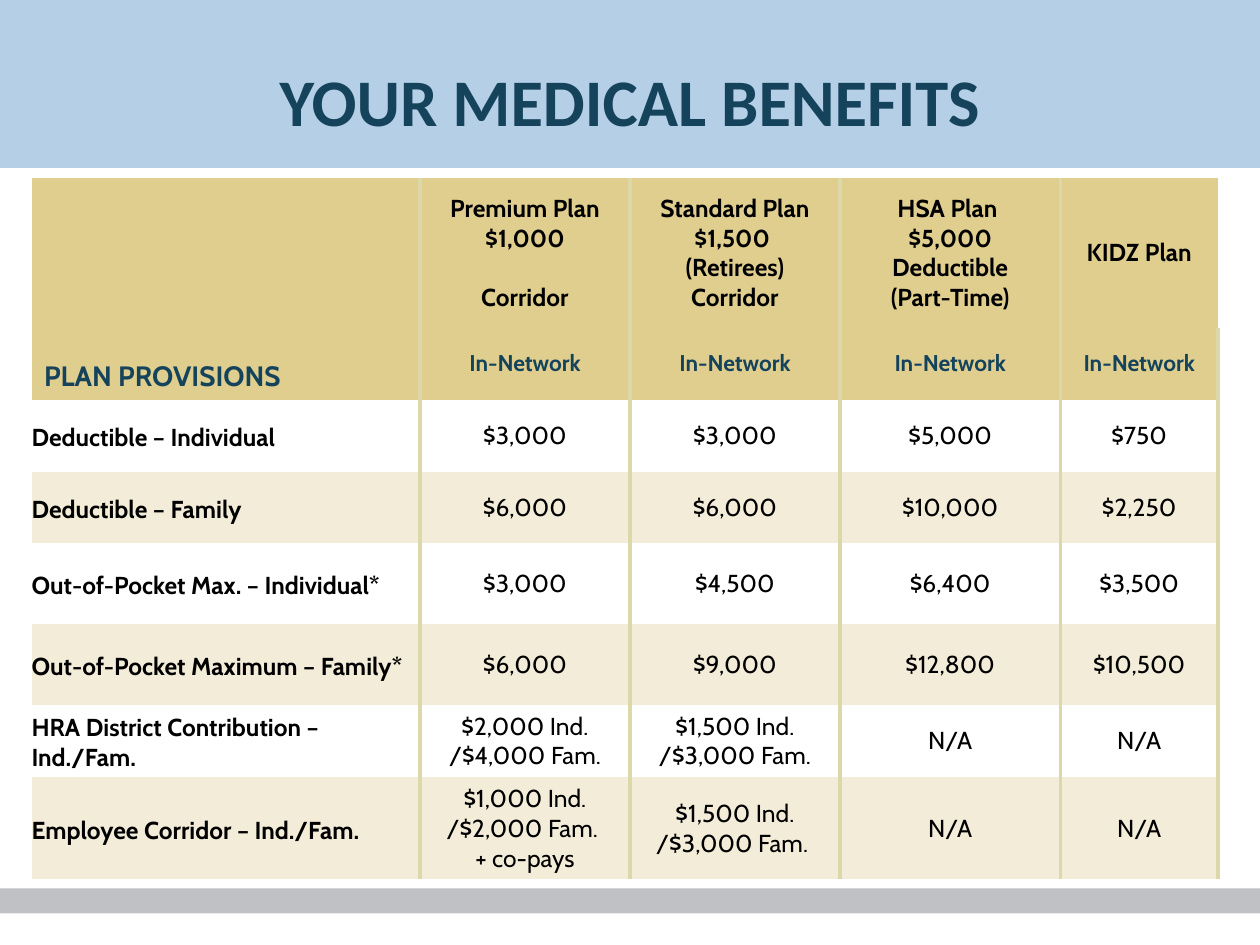
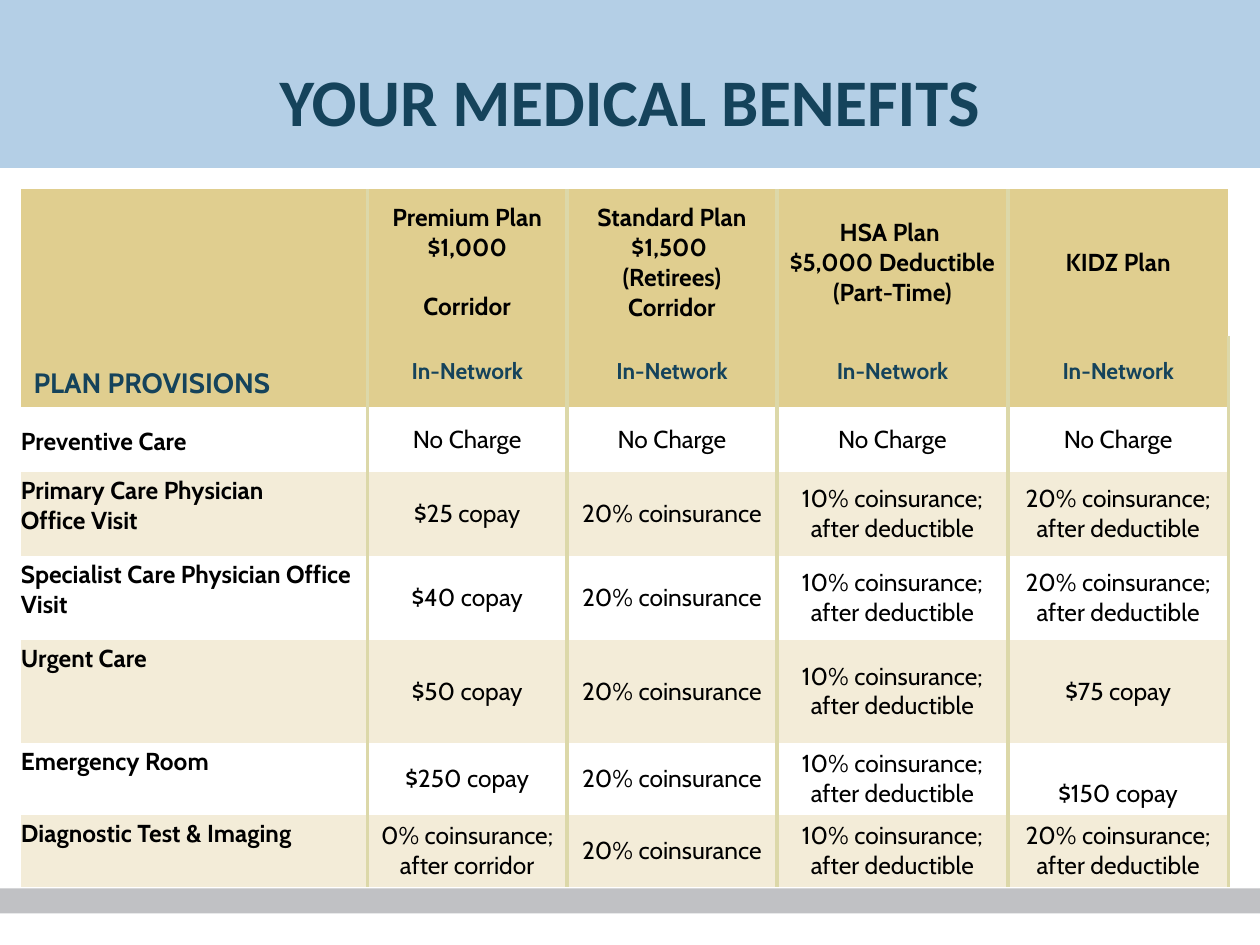
from dataclasses import dataclass

import pptx
import pptx.dml.color
import pptx.enum.shapes
import pptx.enum.text
import pptx.oxml
import pptx.oxml.ns
import pptx.util

Pt = pptx.util.Pt
RGB = pptx.dml.color.RGBColor.from_string
Align = pptx.enum.text.PP_ALIGN
Anchor = pptx.enum.text.MSO_ANCHOR


@dataclass(frozen=True)
class Theme:
    navy: str = "15435B"
    sky: str = "B4CFE6"
    grey: str = "C0C1C4"
    gold: str = "E0CE8F"
    rule: str = "DCD8A9"
    cream: str = "F3ECD8"
    white: str = "FFFFFF"
    black: str = "000000"
    title_font: str = "Calibri"
    table_font: str = "Cabin"
    title_size: int = 38
    corner_size: int = 16
    text_size: int = 14
    network_size: int = 13
    line_pitch: int = 17
    rule_width: float = 2.25


THEME = Theme()

# In the texts, \v breaks a line and \n starts a paragraph set one line lower.
TITLE = "YOUR MEDICAL BENEFITS"
CORNER = "PLAN PROVISIONS"
NETWORK = "In-Network"
PLANS = [
    "Premium Plan $1,000\nCorridor",
    "Standard Plan $1,500 \v(Retirees)\vCorridor",
    "HSA Plan \v$5,000 Deductible\v(Part-Time)",
    "KIDZ Plan",
]
STANDARD = "20% coinsurance"
HSA = "10% coinsurance; after deductible"
KIDZ = "20% coinsurance; after deductible"

BENEFIT_TABLES = [
    {
        "left": 18, "top": 102,
        "columns": [222, 120, 120, 126, 90],
        "heights": [85.3, 41.1, 41.1, 41.1, 46.2, 46.2, 41.1, 58.4],
        "top_labels": [],
        "low_values": [],
        "provisions": [
            ("Deductible – Individual", "$3,000", "$3,000", "$5,000", "$750"),
            ("Deductible – Family", "$6,000", "$6,000", "$10,000", "$2,250"),
            ("Out-of-Pocket Max. – Individual*",
             "$3,000", "$4,500", "$6,400", "$3,500"),
            ("Out-of-Pocket Maximum – Family*",
             "$6,000", "$9,000", "$12,800", "$10,500"),
            ("HRA District Contribution – Ind./Fam.", "$2,000 Ind. /$4,000 Fam.",
             "$1,500 Ind. /$3,000 Fam.", "N/A", "N/A"),
            ("Employee Corridor – Ind./Fam.",
             "$1,000 Ind. /$2,000 Fam. \v+ co-pays",
             "$1,500 Ind. /$3,000 Fam. ", "N/A", "N/A"),
        ],
    },
    {
        "left": 12, "top": 108,
        "columns": [198, 114, 120, 132, 126],
        "heights": [84, 40.5, 37.2, 48, 48, 58.7, 41.1, 41.1],
        "top_labels": [1, 2, 3, 4, 5],
        "low_values": ["$150 copay"],
        "provisions": [
            ("Preventive Care",) + ("No Charge",) * 4,
            ("Primary Care Physician \vOffice Visit",
             "$25 copay", STANDARD, HSA, KIDZ),
            ("Specialist Care Physician Office Visit",
             "$40 copay", STANDARD, HSA, KIDZ),
            ("Urgent Care", "$50 copay", STANDARD, HSA, "$75 copay"),
            ("Emergency Room", "$250 copay", STANDARD, HSA, "$150 copay"),
            ("Diagnostic Test & Imaging",
             "0% coinsurance; after corridor", STANDARD, HSA, KIDZ),
        ],
    },
]


def set_font(paragraph, name, size, color, bold):
    paragraph.font.name = name
    paragraph.font.size = Pt(size)
    paragraph.font.bold = bold
    paragraph.font.color.rgb = RGB(color)


def add_bands(slide):
    """Draw the two bands and move them to the layout, behind its title."""
    layout_tree = slide.slide_layout.shapes.element
    bands = [(0, 96, THEME.sky), (507.6, 14.4, THEME.grey)]
    for number, (top, height, color) in enumerate(bands):
        band = slide.shapes.add_shape(
            pptx.enum.shapes.MSO_SHAPE.RECTANGLE, 0, Pt(top), Pt(720), Pt(height))
        band.shadow.inherit = False
        band.fill.solid()
        band.fill.fore_color.rgb = RGB(color)
        band.line.fill.background()
        band.element.nvSpPr.cNvPr.set("id", str(100 + number))
        layout_tree.insert(2, band.element)


def write_title(slide):
    title = slide.shapes.title
    title.left, title.top, title.width, title.height = 0, Pt(18), Pt(720), Pt(78)
    frame = title.text_frame
    frame.text = TITLE
    frame.auto_size = pptx.enum.text.MSO_AUTO_SIZE.NONE
    frame.vertical_anchor = Anchor.MIDDLE
    frame.paragraphs[0].alignment = Align.CENTER
    set_font(frame.paragraphs[0], THEME.title_font, THEME.title_size, THEME.navy, True)


def set_borders(cell, ruled_sides):
    """Rule the named sides (out of L, R, T, B) and clear the others."""
    for side in "LRTB":
        if side in ruled_sides:
            paint = f'<a:solidFill><a:srgbClr val="{THEME.rule}"/></a:solidFill>'
        else:
            paint = "<a:noFill/>"
        cell._tc.get_or_add_tcPr().append(pptx.oxml.parse_xml(
            f'<a:ln{side} {pptx.oxml.ns.nsdecls("a")} w="{Pt(THEME.rule_width)}">'
            f"{paint}</a:ln{side}>"))


def write_cell(cell, text, fill, size=THEME.text_size, color=THEME.black, bold=True,
               align=Align.CENTER, anchor=Anchor.MIDDLE, insets=(7.2, 3.6, 7.2, 3.6),
               space_before=0):
    cell.fill.solid()
    cell.fill.fore_color.rgb = RGB(fill)
    cell.vertical_anchor = anchor
    (cell.margin_left, cell.margin_top,
     cell.margin_right, cell.margin_bottom) = map(Pt, insets)
    cell.text_frame.text = text
    for number, paragraph in enumerate(cell.text_frame.paragraphs):
        paragraph.alignment = align
        paragraph.space_before = Pt(THEME.line_pitch if number else space_before)
        set_font(paragraph, THEME.table_font, size, color, bold)


def add_benefit_table(slide, benefits):
    columns, heights = benefits["columns"], benefits["heights"]
    table = slide.shapes.add_table(
        len(heights), len(columns), Pt(benefits["left"]), Pt(benefits["top"]),
        Pt(sum(columns)), Pt(sum(heights))).table
    table.first_row = table.horz_banding = False
    for column, width in zip(table.columns, columns):
        column.width = Pt(width)
    for row, height in zip(table.rows, heights):
        row.height = Pt(height)

    last = len(columns) - 1
    for r in range(len(heights)):
        for c in range(len(columns)):
            left = "L" if c else ""
            right = "" if (r, c) == (0, last) else "R"
            set_borders(table.cell(r, c), left + right)

    table.cell(0, 0).merge(table.cell(1, 0))
    write_cell(table.cell(0, 0), CORNER, THEME.gold, THEME.corner_size, THEME.navy,
               align=Align.LEFT, anchor=Anchor.BOTTOM)
    for c, plan in enumerate(PLANS, start=1):
        write_cell(table.cell(0, c), plan, THEME.gold)
        write_cell(table.cell(1, c), NETWORK, THEME.gold, THEME.network_size, THEME.navy)

    for number, (label, *values) in enumerate(benefits["provisions"]):
        fill = THEME.cream if number % 2 else THEME.white
        label_anchor = Anchor.TOP if number in benefits["top_labels"] else Anchor.MIDDLE
        write_cell(table.cell(number + 2, 0), label, fill, align=Align.LEFT,
                   anchor=label_anchor, insets=(0, 2.2, 0, 0), space_before=1.9)
        for c, value in enumerate(values, start=1):
            low = value in benefits["low_values"]
            write_cell(table.cell(number + 2, c), value, fill, bold=False,
                       anchor=Anchor.BOTTOM if low else Anchor.MIDDLE, insets=(3.6,) * 4)


def main():
    deck = pptx.Presentation()
    deck.slide_width, deck.slide_height = Pt(720), Pt(540)
    title_only = deck.slide_layouts[5]
    for number, benefits in enumerate(BENEFIT_TABLES):
        slide = deck.slides.add_slide(title_only)
        if number == 0:
            add_bands(slide)
        write_title(slide)
        add_benefit_table(slide, benefits)
    deck.save("out.pptx")


if __name__ == "__main__":
    main()
